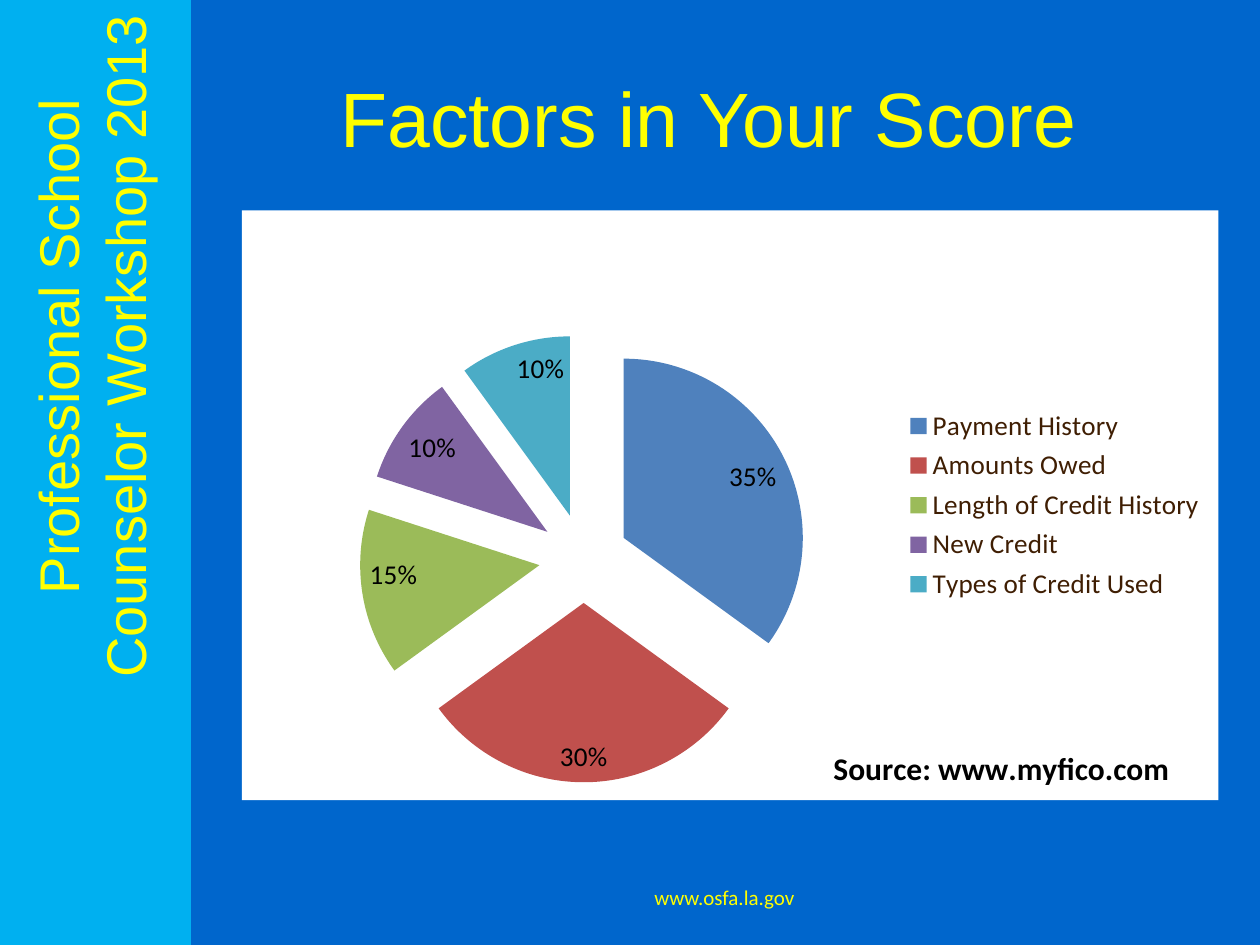
from dataclasses import dataclass

from lxml import etree
from pptx import Presentation
from pptx.chart.data import CategoryChartData
from pptx.dml.color import RGBColor
from pptx.enum.chart import XL_CHART_TYPE, XL_LABEL_POSITION, XL_LEGEND_POSITION
from pptx.enum.shapes import MSO_SHAPE
from pptx.enum.text import MSO_ANCHOR, PP_ALIGN
from pptx.oxml import parse_xml
from pptx.oxml.ns import qn
from pptx.util import Inches, Pt

PIE = XL_CHART_TYPE.PIE
IN_END = XL_LABEL_POSITION.INSIDE_END
RIGHT = XL_LEGEND_POSITION.RIGHT
RECT = MSO_SHAPE.RECTANGLE
MIDDLE = MSO_ANCHOR.MIDDLE
CENTER = PP_ALIGN.CENTER
SPACES = (
    'xmlns:c="http://schemas.openxmlformats.org/drawingml/2006/chart" '
    'xmlns:a="http://schemas.openxmlformats.org/drawingml/2006/main"'
)


@dataclass(frozen=True)
class Theme:
    back: str = "0066CC"
    band: str = "00B0F0"
    text: str = "FFFF00"
    panel: str = "FFFFFF"
    ink: str = "000000"
    legend: str = "3F1E03"
    head: str = "Arial"
    body: str = "Calibri"
    title: float = 44
    side: float = 32
    source: float = 18
    chart: float = 15.5
    foot: float = 12


@dataclass(frozen=True)
class Factor:
    name: str
    share: int
    color: str


THEME = Theme()
FACTORS = [
    Factor("Payment History", 35, "4F81BD"),
    Factor("Amounts Owed", 30, "C0504D"),
    Factor("Length of Credit History", 15, "9BBB59"),
    Factor("New Credit", 10, "8064A2"),
    Factor("Types of Credit Used", 10, "4BACC6"),
]


def style(font, size: float, color: str, face: str, bold: bool = False) -> None:
    font.size = Pt(size)
    font.color.rgb = RGBColor.from_string(color)
    font.name = face
    font.bold = bold


def write(frame, text: str, *, size: float, color: str = THEME.text,
          face: str = THEME.head, bold: bool = False) -> None:
    frame.text = text
    line = frame.paragraphs[0]
    line.alignment = CENTER
    style(line.runs[0].font, size, color, face, bold)


def add_label(slide, box: tuple, text: str, **look):
    frame = slide.shapes.add_textbox(*map(Inches, box)).text_frame
    frame.word_wrap = True
    frame.vertical_anchor = MIDDLE
    write(frame, text, **look)
    return frame


def place(node, spot: int, **marks: float) -> None:
    for old in node.findall(qn("c:layout")):
        node.remove(old)
    inner = '<c:layoutTarget val="inner"/>' if "w" in marks else ""
    modes = "".join(f'<c:{key}Mode val="edge"/>' for key in "xy")
    sizes = "".join(f'<c:{key} val="{val}"/>' for key, val in marks.items())
    node.insert(spot, parse_xml(
        f"<c:layout {SPACES}><c:manualLayout>{inner}{modes}{sizes}"
        "</c:manualLayout></c:layout>"
    ))


def add_band(slide) -> None:
    band = slide.shapes.add_shape(RECT, 0, 0, Inches(1.5), Inches(7.5))
    band.shadow.inherit = False
    band.fill.solid()
    band.fill.fore_color.rgb = RGBColor.from_string(THEME.band)
    band.line.color.rgb = RGBColor.from_string(THEME.band)
    band.line.width = Pt(2)
    frame = add_label(slide, (0.08, 0, 1.28, 5.5),
                      "Professional School Counselor Workshop 2013",
                      size=THEME.side)
    frame.margin_left = frame.margin_right = Inches(0.05)
    frame._txBody.bodyPr.set("vert", "vert270")


def add_pie(slide, factors: list[Factor]) -> None:
    data = CategoryChartData()
    data.categories = [item.name for item in factors]
    data.add_series("Series 1", [item.share for item in factors])
    box = map(Inches, (1.92, 1.67, 7.75, 4.68))
    chart = slide.shapes.add_chart(PIE, *box, data).chart
    style(chart.font, THEME.chart, THEME.ink, THEME.body)
    root = chart.element
    root.find(qn("c:chart")).addnext(parse_xml(
        f'<c:spPr {SPACES}><a:solidFill><a:srgbClr val="{THEME.panel}"/>'
        "</a:solidFill><a:ln><a:noFill/></a:ln></c:spPr>"
    ))

    chart.has_title = True
    title = chart.chart_title
    write(title.text_frame, "Source: www.myfico.com", size=THEME.source,
          color=THEME.ink, face=THEME.body, bold=True)
    place(title._element, 1, x=0.6, y=0.9)
    title._element.find(qn("c:overlay")).set("val", "1")
    place(root.find(".//" + qn("c:plotArea")), 0, x=0.12, y=0.21, w=0.46, h=0.76)

    chart.has_legend = True
    chart.legend.position = RIGHT
    chart.legend.include_in_layout = False
    style(chart.legend.font, THEME.chart, THEME.legend, THEME.body)

    plot = chart.plots[0]
    plot.vary_by_categories = True
    series = plot.series[0]
    burst = etree.Element(qn("c:explosion"), val="25")
    series._element.find(qn("c:tx")).addnext(burst)
    for index, item in enumerate(factors):
        fill = series.points[index].format.fill
        fill.solid()
        fill.fore_color.rgb = RGBColor.from_string(item.color)
    labels = series.data_labels
    labels.show_percentage = True
    labels.show_value = False
    labels.number_format = "0%"
    labels.number_format_is_linked = False
    labels.position = IN_END
    style(labels.font, THEME.chart, THEME.ink, THEME.body)


def main() -> None:
    deck = Presentation()
    deck.slide_width, deck.slide_height = Inches(10), Inches(7.5)
    slide = deck.slides.add_slide(deck.slide_layouts[5])
    slide.background.fill.solid()
    slide.background.fill.fore_color.rgb = RGBColor.from_string(THEME.back)
    add_band(slide)
    title = slide.shapes.title
    title.left, title.top = Inches(1.75), Inches(0.3)
    title.width, title.height = Inches(7.75), Inches(1.25)
    title.text_frame.vertical_anchor = MIDDLE
    write(title.text_frame, "Factors in Your Score", size=THEME.title)
    add_label(slide, (1.5, 6.92, 8.5, 0.4), "www.osfa.la.gov",
              size=THEME.foot, face=THEME.body)
    add_pie(slide, FACTORS)
    deck.save("out.pptx")


if __name__ == "__main__":
    main()
